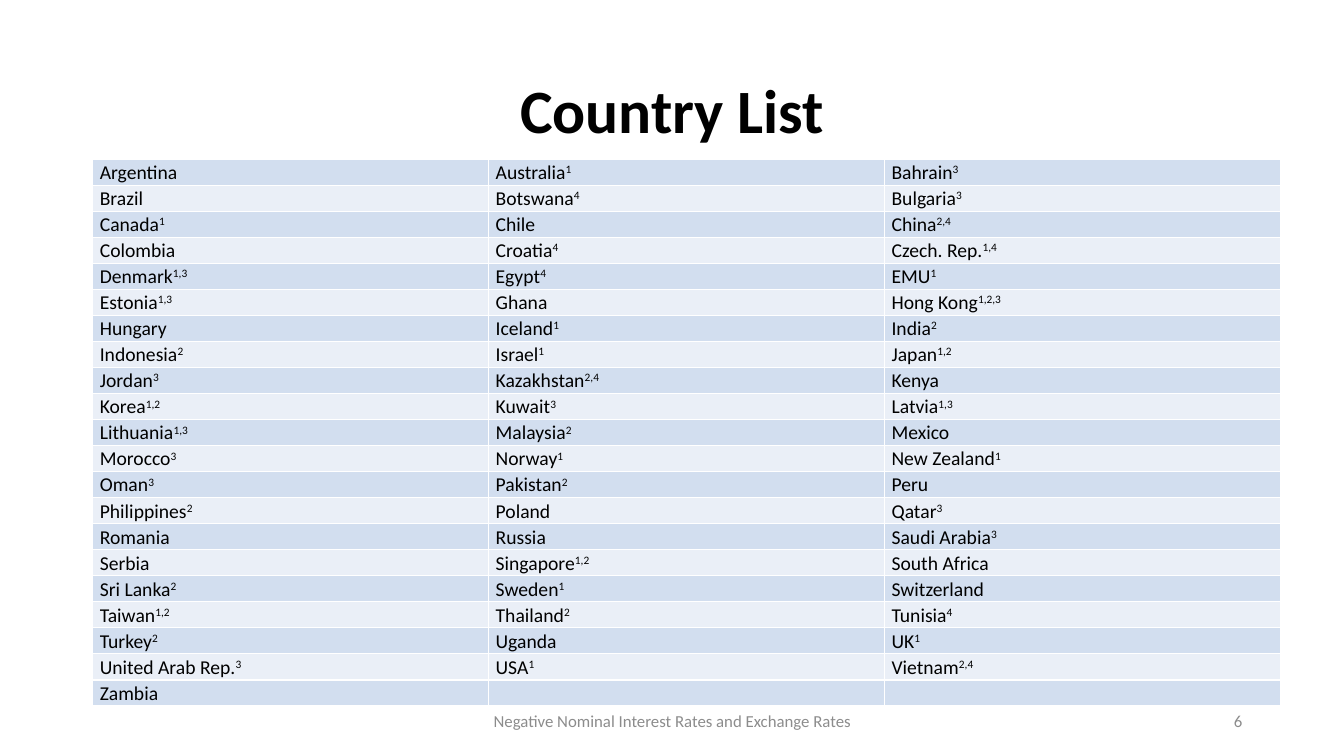
from lxml.etree import SubElement
from pptx import Presentation
from pptx.dml.color import RGBColor
from pptx.enum.text import MSO_ANCHOR, PP_ALIGN
from pptx.oxml.ns import qn
from pptx.util import Inches, Pt

COLORS = {
    "text": "000000",
    "footer": "8C8C8C",
    "band_dark": "D2DEEF",
    "band_light": "EAEFF7",
    "border": "FFFFFF",
}
FONT = "Calibri"
COLUMNS = 3
COUNTRIES = [
    "Argentina", "Australia^1", "Bahrain^3",
    "Brazil", "Botswana^4", "Bulgaria^3",
    "Canada^1", "Chile", "China^2,4",
    "Colombia", "Croatia^4", "Czech. Rep.^1,4",
    "Denmark^1,3", "Egypt^4", "EMU^1",
    "Estonia^1,3", "Ghana", "Hong Kong^1,2,3",
    "Hungary", "Iceland^1", "India^2",
    "Indonesia^2", "Israel^1", "Japan^1,2",
    "Jordan^3", "Kazakhstan^2,4", "Kenya",
    "Korea^1,2", "Kuwait^3", "Latvia^1,3",
    "Lithuania^1,3", "Malaysia^2", "Mexico",
    "Morocco^3", "Norway^1", "New Zealand^1",
    "Oman^3", "Pakistan^2", "Peru",
    "Philippines^2", "Poland", "Qatar^3",
    "Romania", "Russia", "Saudi Arabia^3",
    "Serbia", "Singapore^1,2", "South Africa",
    "Sri Lanka^2", "Sweden^1", "Switzerland",
    "Taiwan^1,2", "Thailand^2", "Tunisia^4",
    "Turkey^2", "Uganda", "UK^1",
    "United Arab Rep.^3", "USA^1", "Vietnam^2,4",
    "Zambia",
]


def rgb(name):
    return RGBColor.from_string(COLORS[name])


def format_paragraph(paragraph, size, color, align, bold=False):
    paragraph.alignment = align
    font = paragraph.font
    font.name, font.size, font.bold = FONT, Pt(size), bold
    font.color.rgb = rgb(color)


def add_title(slide, left, top, width, height):
    title = slide.shapes.title
    title.left, title.top = Inches(left), Inches(top)
    title.width, title.height = Inches(width), Inches(height)
    title.text_frame.text = "Country List"
    title.text_frame.vertical_anchor = MSO_ANCHOR.MIDDLE
    heading = title.text_frame.paragraphs[0]
    heading.line_spacing = 0.9
    format_paragraph(heading, 44, "text", PP_ALIGN.CENTER, bold=True)


def add_borders(cell):
    properties = cell._tc.get_or_add_tcPr()
    for side in ("a:lnL", "a:lnR", "a:lnT", "a:lnB"):
        line = SubElement(properties, qn(side), w=str(Pt(1)))
        fill = SubElement(line, qn("a:solidFill"))
        SubElement(fill, qn("a:srgbClr"), val=COLORS["border"])


def fill_country_cell(cell, entry, band):
    cell.margin_left = cell.margin_right = Inches(0.07)
    cell.margin_top = cell.margin_bottom = 0
    add_borders(cell)
    cell.fill.solid()
    cell.fill.fore_color.rgb = rgb(band)
    paragraph = cell.text_frame.paragraphs[0]
    paragraph.line_spacing = 1.07
    format_paragraph(paragraph, 14, "text", PP_ALIGN.LEFT)
    country, _, notes = entry.partition("^")
    if country:
        paragraph.add_run().text = country
    else:
        SubElement(paragraph._p, qn("a:endParaRPr"), sz="1400")
    if notes:
        superscript = paragraph.add_run()
        superscript.text = notes
        superscript._r.get_or_add_rPr().set("baseline", "30000")


def add_country_table(slide, left, top, width, row_height, last_height):
    row_count = -(-len(COUNTRIES) // COLUMNS)
    height = row_height * (row_count - 1) + last_height
    table = slide.shapes.add_table(
        row_count, COLUMNS, Inches(left), Inches(top), Inches(width), Inches(height)
    ).table
    table.first_row = table.horz_banding = False
    for row in table.rows:
        row.height = Inches(row_height)
    table.rows[row_count - 1].height = Inches(last_height)
    entries = COUNTRIES + [""] * (row_count * COLUMNS - len(COUNTRIES))
    for index, entry in enumerate(entries):
        row, column = divmod(index, COLUMNS)
        band = "band_light" if row % 2 else "band_dark"
        fill_country_cell(table.cell(row, column), entry, band)


def add_footer_text(slide, text, left, top, width, height, align):
    footer = slide.shapes.add_textbox(
        Inches(left), Inches(top), Inches(width), Inches(height)
    ).text_frame
    footer.word_wrap = True
    footer.vertical_anchor = MSO_ANCHOR.MIDDLE
    footer.text = text
    format_paragraph(footer.paragraphs[0], 12, "footer", align)


def main():
    presentation = Presentation()
    presentation.slide_width = Inches(13.33)
    presentation.slide_height = Inches(7.5)
    slide = presentation.slides.add_slide(presentation.slide_layouts[5])
    add_title(slide, 0.92, 0.4, 11.5, 1.45)
    add_country_table(slide, 0.92, 1.58, 11.78, 5.17 / 20, 0.21)
    add_footer_text(
        slide, "Negative Nominal Interest Rates and Exchange Rates",
        4.42, 6.95, 4.5, 0.4, PP_ALIGN.CENTER,
    )
    add_footer_text(slide, "6", 9.42, 6.95, 3, 0.4, PP_ALIGN.RIGHT)
    presentation.save("out.pptx")


if __name__ == "__main__":
    main()
